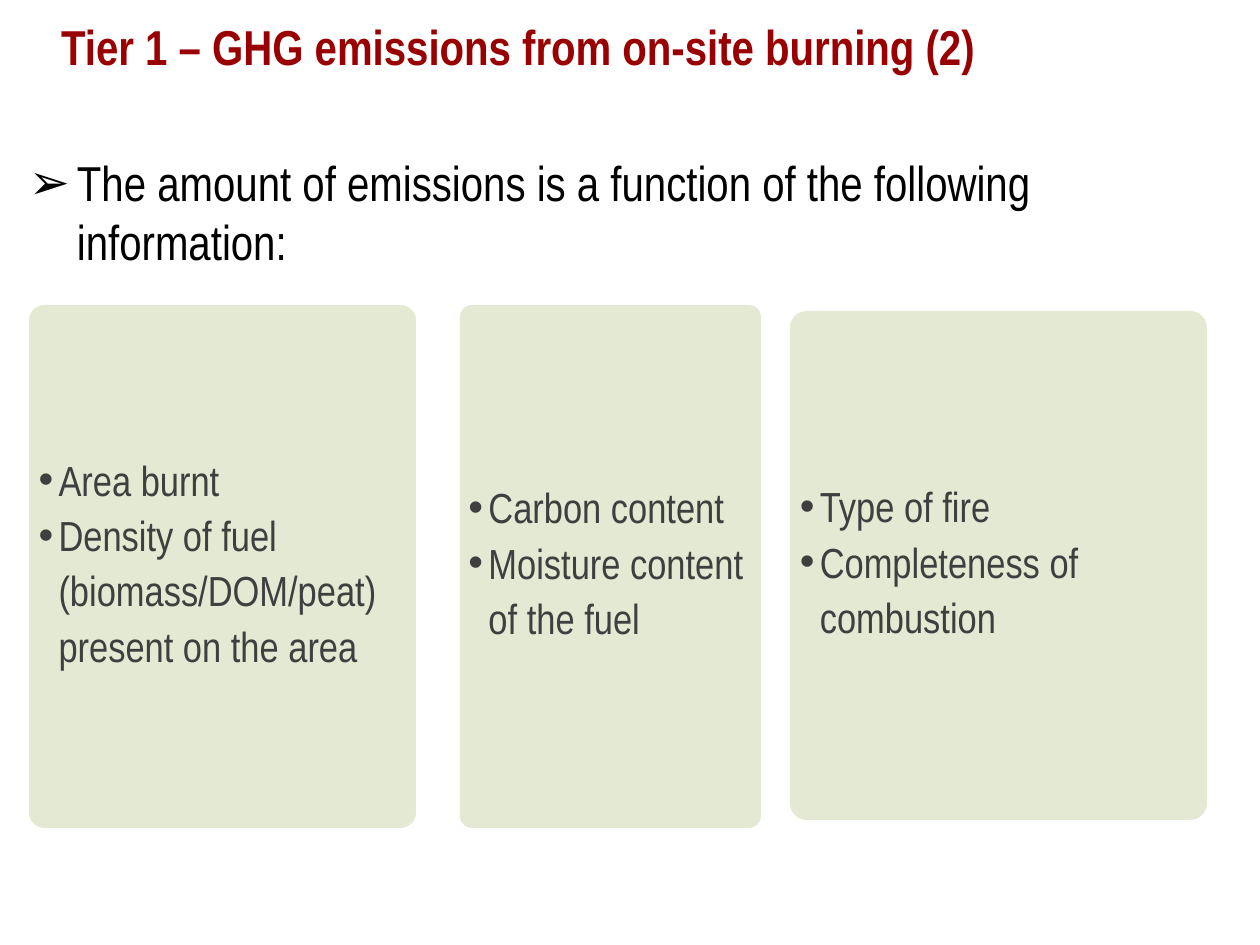
from dataclasses import dataclass
from lxml.etree import SubElement
from pptx import Presentation
from pptx.dml.color import RGBColor
from pptx.enum.shapes import MSO_SHAPE
from pptx.enum.text import MSO_ANCHOR, PP_ALIGN
from pptx.oxml.ns import qn
from pptx.util import Emu, Pt


@dataclass(frozen=True)
class Theme:
    face: str = "Arial Narrow"
    red: str = "990002"
    black: str = "000000"
    gray: str = "3F3F3F"
    green: str = "A4B86B"
    alpha: int = 30
    head: int = 28
    item: int = 24


THEME = Theme()
CARDS = [
    ((29, 305, 387, 523),
     ["Area burnt", "Density of fuel (biomass/DOM/peat) present on the area"]),
    ((460, 305, 301, 523),
     ["Carbon content", "Moisture content of the fuel"]),
    ((790, 311, 417, 509),
     ["Type of fire", "Completeness of combustion"]),
]


def px(n):
    return Emu(round(n * 914400 / 126))


def set_pad(frame, left, top, right, bottom):
    frame.margin_left, frame.margin_top = px(left), px(top)
    frame.margin_right, frame.margin_bottom = px(right), px(bottom)


def add_run(para, text, size, color, bold=False):
    run = para.add_run()
    run.text = text
    font = run.font
    font.name, font.size, font.bold = THEME.face, Pt(size), bold
    font.color.rgb = RGBColor.from_string(color)


def set_mark(para, mark, dent):
    props = para._p.get_or_add_pPr()
    props.set("marL", str(px(dent)))
    props.set("indent", str(-px(dent)))
    SubElement(props, qn("a:buFont")).set("typeface", "Arial")
    SubElement(props, qn("a:buChar")).set("char", mark)


def add_text(slide, box, text, color, bold=False, mark=None, dent=0, pad=6):
    frame = slide.shapes.add_textbox(*map(px, box)).text_frame
    frame.word_wrap = True
    set_pad(frame, 13, pad, 13, 6)
    para = frame.paragraphs[0]
    if mark:
        set_mark(para, mark, dent)
    add_run(para, text, THEME.head, color, bold)


def add_card(slide, box, items):
    card = slide.shapes.add_shape(MSO_SHAPE.ROUNDED_RECTANGLE, *map(px, box))
    card.adjustments[0] = 0.04
    card.shadow.inherit = False
    card.line.fill.background()
    card.fill.solid()
    card.fill.fore_color.rgb = RGBColor.from_string(THEME.green)
    tint = card.fill._xPr.find(qn("a:solidFill"))[0]
    SubElement(tint, qn("a:alpha")).set("val", str(THEME.alpha * 1000))
    frame = card.text_frame
    frame.word_wrap = True
    frame.vertical_anchor = MSO_ANCHOR.MIDDLE
    set_pad(frame, 5, 0, 0, 13)
    for i, item in enumerate(items):
        para = frame.add_paragraph() if i else frame.paragraphs[0]
        set_mark(para, "•", 20)
        para.alignment = PP_ALIGN.LEFT
        para.line_spacing = 1.1
        add_run(para, item, THEME.item, THEME.gray)


def main():
    deck = Presentation()
    deck.slide_width, deck.slide_height = px(1260), px(945)
    slide = deck.slides.add_slide(deck.slide_layouts[6])
    add_text(slide, (48, 17, 1188, 103),
             "Tier 1 – GHG emissions from on-site burning (2)",
             THEME.red, bold=True, pad=0)
    add_text(slide, (16, 147, 1234, 757),
             "The amount of emissions is a function of the following information:",
             THEME.black, mark="➢", dent=48)
    for box, items in CARDS:
        add_card(slide, box, items)
    deck.save("out.pptx")


if __name__ == "__main__":
    main()
